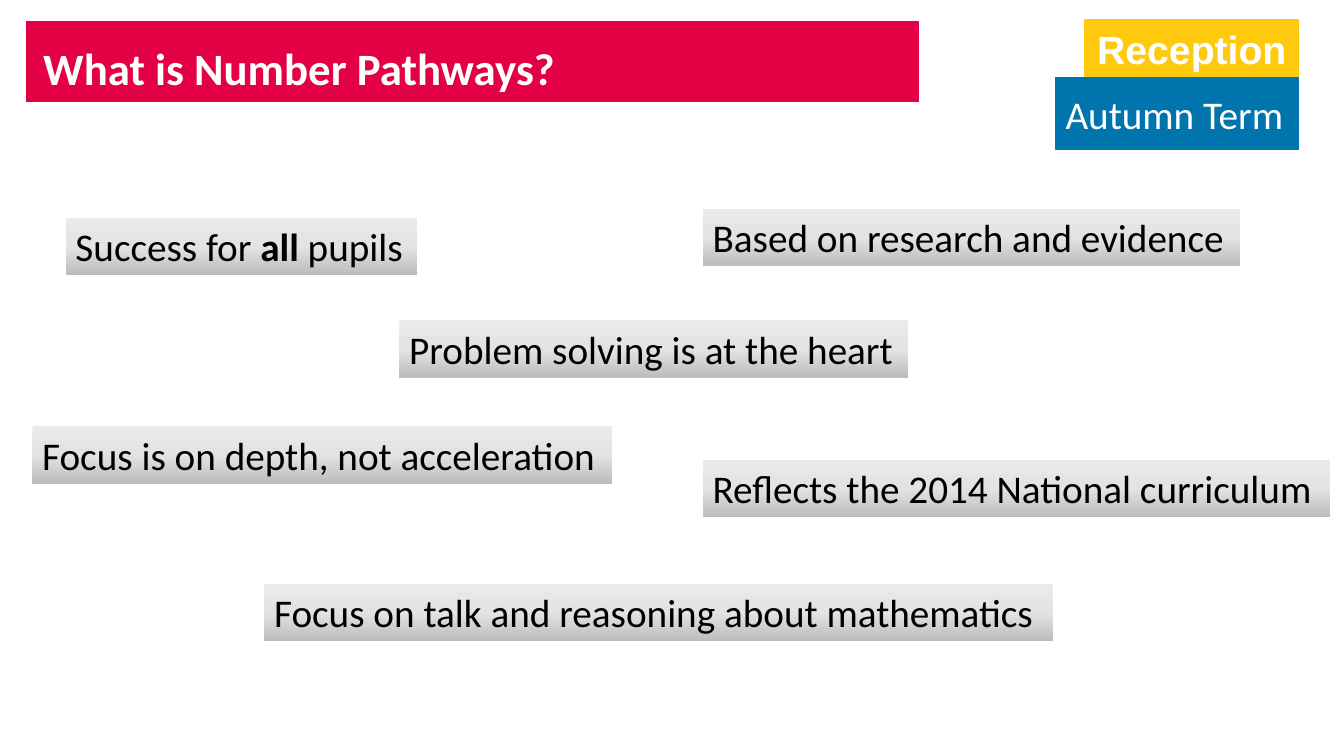
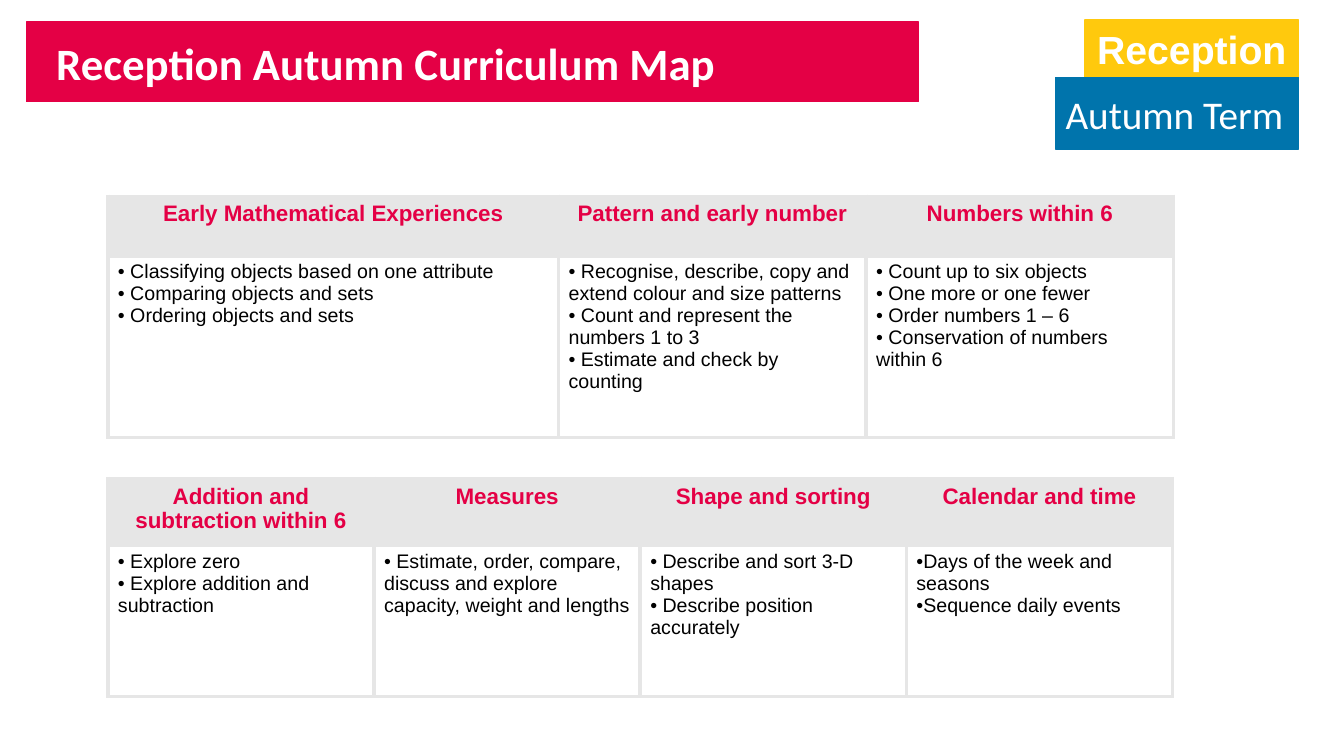
from copy import deepcopy

from lxml import etree
from pptx import Presentation
from pptx import util as u
from pptx.dml.color import RGBColor
from pptx.enum import shapes, text
from pptx.oxml.ns import qn

RED, GOLD, BLUE = "E40045", "FFC90D", "0074AC"
WHITE, BLACK, GREY = "FFFFFF", "000000", "E6E6E6"
FADE = [(0, "EBEAEA"), (0.5, "E4E3E3"), (1, "BDBCBC")]
LEFT, MID = text.PP_ALIGN.LEFT, text.PP_ALIGN.CENTER
TOP, CORE = text.MSO_ANCHOR.TOP, text.MSO_ANCHOR.MIDDLE


def rgb(code):
    return RGBColor.from_string(code)


def write(frame, *lines, size=28, font="Calibri", color=BLACK, bold=False,
          align=LEFT, bullet=False):
    """Fill a frame; a line is a string or a list of (words, bold) pairs."""
    for i, line in enumerate(lines):
        para = frame.add_paragraph() if i else frame.paragraphs[0]
        para.alignment = align
        if bullet:
            props = para._p.get_or_add_pPr()
            props.set("marL", "0")
            props.set("indent", "0")
            etree.SubElement(props, qn("a:buFont"), typeface=font)
            etree.SubElement(props, qn("a:buChar"), char="•")
        for words, heavy in [(line, bold)] if isinstance(line, str) else line:
            run = para.add_run()
            run.text = words
            run.font.size = u.Pt(size)
            run.font.name = font
            run.font.bold = heavy
            run.font.color.rgb = rgb(color)


class Deck:
    def __init__(self):
        self.prs = Presentation()
        self.prs.slide_width = u.Inches(13.33)
        self.prs.slide_height = u.Inches(7.5)
        self.slide = None

    def page(self, title, x, y, w):
        """Start a slide with its title band and corner badges."""
        self.slide = self.prs.slides.add_slide(self.prs.slide_layouts[6])
        self.band(0.26, 0.22, 8.85, 0.79, RED)
        name = self.band(10.76, 0.2, 2.12, 0.57, GOLD)
        write(name, "Reception", font="Arial", color=WHITE, bold=True, align=MID)
        term = self.band(10.47, 0.77, 2.41, 0.71, BLUE, CORE)
        write(term, "Autumn Term", color=WHITE)
        box = self.slide.shapes.add_textbox(*map(u.Inches, (x, y, w, 0.64)))
        box.text_frame.word_wrap = False
        write(box.text_frame, title, size=32, color=WHITE, bold=True)

    def rect(self, x, y, w, h, anchor=TOP):
        shape = self.slide.shapes.add_shape(
            shapes.MSO_SHAPE.RECTANGLE, *map(u.Inches, (x, y, w, h)))
        shape.shadow.inherit = False
        shape.text_frame.vertical_anchor = anchor
        return shape

    def band(self, x, y, w, h, color, anchor=TOP):
        shape = self.rect(x, y, w, h, anchor)
        shape.fill.solid()
        shape.fill.fore_color.rgb = rgb(color)
        shape.line.color.rgb = rgb(color)
        shape.line.width = u.Pt(1)
        return shape.text_frame

    def chip(self, x, y, w, line):
        """A grey faded label."""
        shape = self.rect(x, y, w, 0.57)
        shape.line.fill.background()
        shape.fill.gradient()
        shape.fill.gradient_angle = 270
        first = shape._element.spPr.find(".//" + qn("a:gs"))
        first.addnext(deepcopy(first))
        for stop, (spot, color) in zip(shape.fill.gradient_stops, FADE):
            stop.position = spot
            stop.color.rgb = rgb(color)
        shape.text_frame.word_wrap = False
        write(shape.text_frame, line)

    def edge(self, cell):
        props = cell._tc.get_or_add_tcPr()
        for side in ("lnL", "lnR", "lnT", "lnB"):
            line = etree.SubElement(props, qn("a:" + side), w=str(u.Pt(3)))
            fill = etree.SubElement(line, qn("a:solidFill"))
            etree.SubElement(fill, qn("a:srgbClr"), val=GREY)

    def grid(self, y, cols, rows, units):
        """A table of units, each a heading above its bulleted points."""
        table = self.slide.shapes.add_table(
            2, len(cols), u.Inches(1.07), u.Inches(y),
            u.Inches(sum(cols)), u.Inches(sum(rows))).table
        for row, h in zip(table.rows, rows):
            row.height = u.Inches(h)
        for i, (w, (head, points)) in enumerate(zip(cols, units)):
            table.columns[i].width = u.Inches(w)
            for j, color in enumerate((GREY, WHITE)):
                cell = table.cell(j, i)
                self.edge(cell)
                cell.fill.solid()
                cell.fill.fore_color.rgb = rgb(color)
            write(table.cell(0, i).text_frame, head, size=16, font="Arial",
                  color=RED, bold=True, align=MID)
            write(table.cell(1, i).text_frame, *points, size=14, font="Arial",
                  bullet=True)


def main():
    deck = Deck()

    # Principles
    deck.page("What is Number Pathways?", 0.33, 0.35, 6.01)
    for chip in [
        (0.65, 2.16, 3.49, [("Success for ", False), ("all", True), (" pupils", False)]),
        (0.32, 4.23, 5.75, "Focus is on depth, not acceleration"),
        (6.97, 2.07, 5.33, "Based on research and evidence"),
        (6.97, 4.56, 6.22, "Reflects the 2014 National curriculum"),
        (3.96, 3.18, 5.05, "Problem solving is at the heart"),
        (2.62, 5.79, 7.82, "Focus on talk and reasoning about mathematics"),
    ]:
        deck.chip(*chip)

    # Curriculum map
    deck.page("Reception Autumn Curriculum Map", 0.46, 0.31, 6.8)
    deck.grid(1.95, [4.47, 3.05, 3.05], [0.59, 1.8], [
        ("Early Mathematical Experiences", [
            " Classifying objects based on one attribute",
            " Comparing objects and sets",
            " Ordering objects and sets"]),
        ("Pattern and early number", [
            " Recognise, describe, copy and extend colour and size patterns",
            " Count and represent the numbers 1 to 3",
            " Estimate and check by counting"]),
        ("Numbers within 6", [
            " Count up to six objects",
            " One more or one fewer",
            " Order numbers 1 – 6",
            " Conservation of numbers within 6"]),
    ])
    deck.grid(4.75, [2.64] * 4, [0.66, 1.5], [
        ("Addition and subtraction within 6", [
            " Explore zero",
            " Explore addition and subtraction"]),
        ("Measures", [
            " Estimate, order, compare, discuss and explore capacity, "
            "weight and lengths"]),
        ("Shape and sorting", [
            " Describe and sort 3-D shapes",
            " Describe position accurately"]),
        ("Calendar and time", [
            "Days of the week and seasons",
            "Sequence daily events"]),
    ])
    deck.prs.save("out.pptx")


if __name__ == "__main__":
    main()
